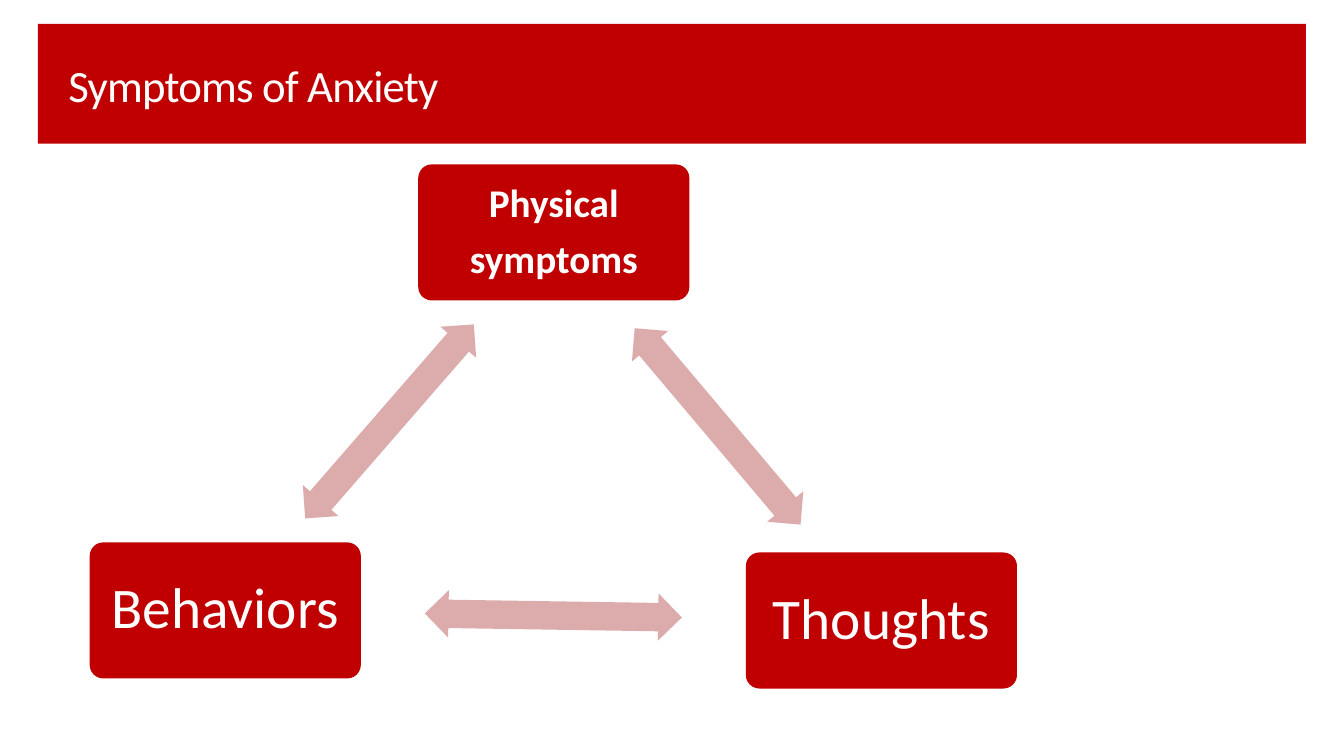
from itertools import pairwise
from math import atan2, degrees
from pptx import Presentation
from pptx.dml.color import RGBColor
from pptx.enum.shapes import MSO_SHAPE
from pptx.enum.text import MSO_ANCHOR, PP_ALIGN
from pptx.util import Pt

RED, PINK, WHITE = "C00000", "DCABAB", "FFFFFF"
FONT = "Calibri"
TITLE = "Symptoms of Anxiety"
TITLE_SIZE = 32
BANNER = (27, 17, 905.8, 85.7)
TITLE_BOX = (41.8, 28.8, 497.5, 67.7)
BOX_WIDTH, BOX_HEIGHT = 193.7, 97.2
ARROW_WIDTH, ARROW_HEIGHT = 183.6, 33.8
NODES = [
    {"lines": ["Physical", "symptoms"], "center": (395.6, 166), "size": 28, "bold": True, "inset": 8.6},
    {"lines": ["Thoughts"], "center": (629.6, 443.2), "size": 41, "bold": False, "inset": 12.2},
    {"lines": ["Behaviors"], "center": (160.9, 436), "size": 41, "bold": False, "inset": 12.2},
]


def color(hex_string):
    return RGBColor.from_string(hex_string)


def add_filled(slide, kind, box, fill):
    shape = slide.shapes.add_shape(kind, *map(Pt, box))
    shape.shadow.inherit = False
    shape.fill.solid()
    shape.fill.fore_color.rgb = color(fill)
    shape.line.fill.background()
    return shape


def centered(center, width, height):
    return center[0] - width / 2, center[1] - height / 2, width, height


def write_lines(frame, lines, size, bold, alignment, space_after):
    frame.word_wrap = True
    frame.vertical_anchor = MSO_ANCHOR.MIDDLE
    for index, line in enumerate(lines):
        paragraph = frame.add_paragraph() if index else frame.paragraphs[0]
        paragraph.alignment = alignment
        paragraph.line_spacing = 0.9
        paragraph.space_after = Pt(space_after)
        run = paragraph.add_run()
        run.text = line
        run.font.name = FONT
        run.font.size = Pt(size)
        run.font.bold = bold
        run.font.color.rgb = color(WHITE)


def add_title(slide):
    add_filled(slide, MSO_SHAPE.RECTANGLE, BANNER, RED)
    frame = slide.shapes.add_textbox(*map(Pt, TITLE_BOX)).text_frame
    write_lines(frame, [TITLE], TITLE_SIZE, False, PP_ALIGN.LEFT, 0)
    frame.paragraphs[0].runs[0].font._element.set("spc", "-60")


def add_node(slide, node):
    box = centered(node["center"], BOX_WIDTH, BOX_HEIGHT)
    shape = add_filled(slide, MSO_SHAPE.ROUNDED_RECTANGLE, box, RED)
    shape.adjustments[0] = 0.1
    frame = shape.text_frame
    inset = Pt(node["inset"])
    frame.margin_left = frame.margin_right = inset
    frame.margin_top = frame.margin_bottom = inset
    write_lines(frame, node["lines"], node["size"], node["bold"], PP_ALIGN.CENTER, 0.35 * node["size"])


def add_arrow(slide, start, end):
    middle = ((start[0] + end[0]) / 2, (start[1] + end[1]) / 2)
    box = centered(middle, ARROW_WIDTH, ARROW_HEIGHT)
    arrow = add_filled(slide, MSO_SHAPE.LEFT_RIGHT_ARROW, box, PINK)
    arrow.adjustments[0] = 0.6
    arrow.adjustments[1] = 0.5
    arrow.rotation = degrees(atan2(end[1] - start[1], end[0] - start[0])) % 360


def main():
    presentation = Presentation()
    presentation.slide_width, presentation.slide_height = Pt(960), Pt(540)
    slide = presentation.slides.add_slide(presentation.slide_layouts[6])
    add_title(slide)
    for node, following in pairwise(NODES + NODES[:1]):
        add_node(slide, node)
        add_arrow(slide, node["center"], following["center"])
    presentation.save("out.pptx")


if __name__ == "__main__":
    main()
